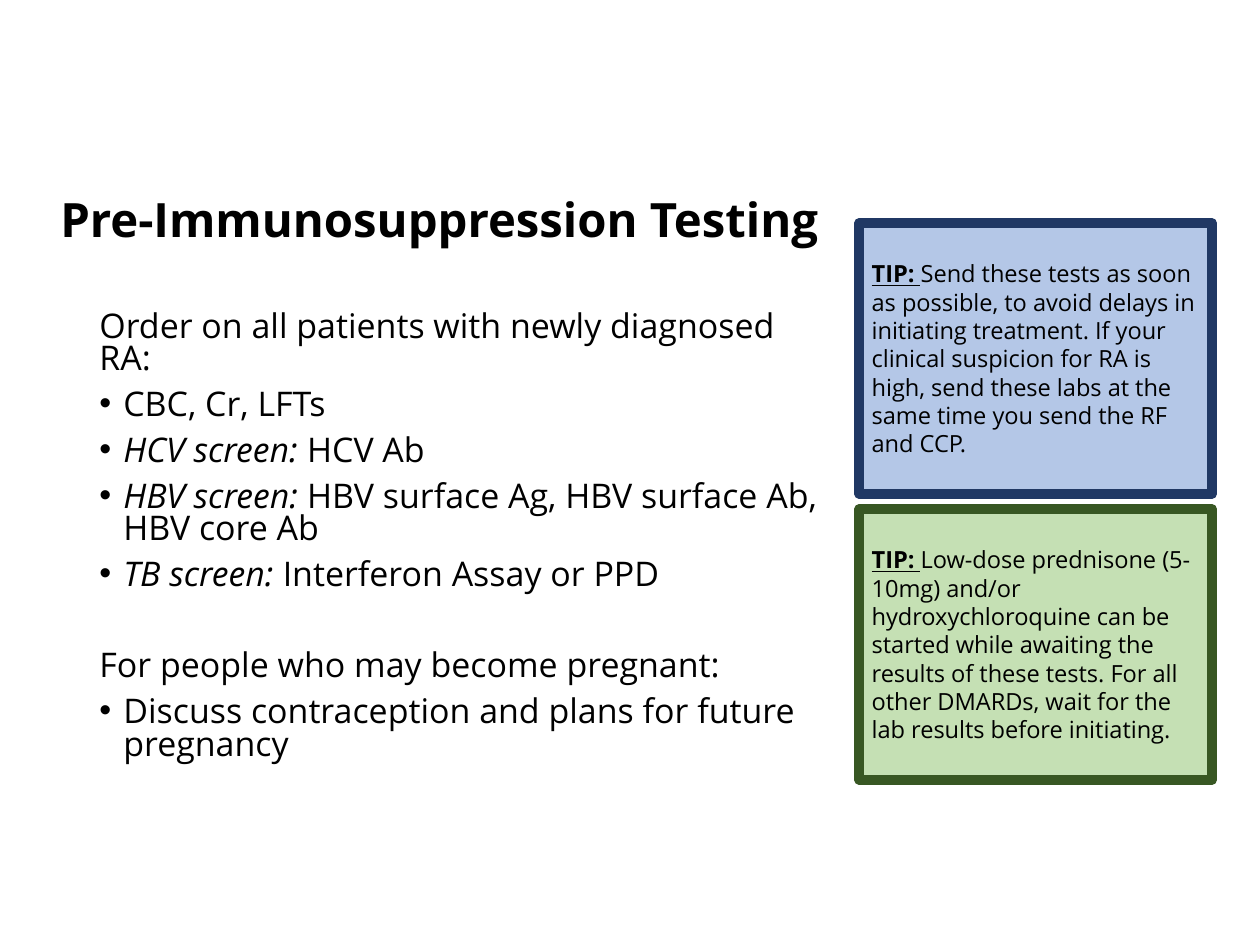
from dataclasses import dataclass

from lxml import etree
from pptx import Presentation
from pptx.dml.color import RGBColor
from pptx.enum.shapes import MSO_SHAPE
from pptx.enum.text import MSO_ANCHOR, PP_ALIGN
from pptx.oxml.ns import qn
from pptx.util import Inches, Pt

RECT = MSO_SHAPE.RECTANGLE
TOP, MIDDLE = MSO_ANCHOR.TOP, MSO_ANCHOR.MIDDLE
LEFT = PP_ALIGN.LEFT


@dataclass(frozen=True)
class Theme:
    font: str = "Open Sans"
    ink: str = "000000"
    blue: tuple = ("B4C7E7", "203864")
    green: tuple = ("C5E0B4", "385723")
    title: float = 27
    body: float = 19.4
    tip: float = 13.5
    gap: float = 7.5
    border: float = 5.5
    indent: float = 0.19


THEME = Theme()

# Each line: bulleted, italic lead, plain text, space before
LINES = [
    (False, "", "Order on all patients with newly diagnosed RA:", 0),
    (True, "", "CBC, Cr, LFTs", THEME.gap),
    (True, "HCV screen: ", "HCV Ab", THEME.gap),
    (True, "HBV screen: ", "HBV surface Ag, HBV surface Ab, HBV core Ab", THEME.gap),
    (True, "TB screen: ", "Interferon Assay or PPD", THEME.gap),
    (False, "", "For people who may become pregnant:", 33.5),
    (True, "", "Discuss contraception and plans for future pregnancy", THEME.gap),
]

TIPS = [
    (THEME.blue, "Send these tests as soon as possible, to avoid delays in "
     "initiating treatment. If your clinical suspicion for RA is high, send "
     "these labs at the same time you send the RF and CCP."),
    (THEME.green, "Low-dose prednisone (5-10mg) and/or hydroxychloroquine can be "
     "started while awaiting the results of these tests. For all other DMARDs, "
     "wait for the lab results before initiating."),
]


def add_run(para, text, size, **style):
    run = para.add_run()
    run.text = text
    values = {"name": THEME.font, "size": Pt(size), **style}
    for name, value in values.items():
        setattr(run.font, name, value)
    run.font.color.rgb = RGBColor.from_string(THEME.ink)


def add_bullet(para):
    props = para._p.get_or_add_pPr()
    props.set("marL", str(Inches(THEME.indent)))
    props.set("indent", str(-Inches(THEME.indent)))
    etree.SubElement(props, qn("a:buFont"), typeface="Arial")
    etree.SubElement(props, qn("a:buChar"), char="•")


def add_frame(slide, box, anchor):
    frame = slide.shapes.add_textbox(*map(Inches, box)).text_frame
    frame.word_wrap = True
    frame.vertical_anchor = anchor
    return frame


def add_title(slide, box):
    para = add_frame(slide, box, MIDDLE).paragraphs[0]
    para.line_spacing = 0.9
    add_run(para, "Pre-Immunosuppression Testing", THEME.title, bold=True)


def add_body(slide, box):
    frame = add_frame(slide, box, TOP)
    for i, (bullet, lead, text, space) in enumerate(LINES):
        para = frame.add_paragraph() if i else frame.paragraphs[0]
        para.line_spacing = 0.8
        para.space_before = Pt(space)
        if bullet:
            add_bullet(para)
        if lead:
            add_run(para, lead, THEME.body, italic=True)
        add_run(para, text, THEME.body)


def add_tip(slide, box, colors, text):
    shape = slide.shapes.add_shape(RECT, *map(Inches, box))
    shape.shadow.inherit = False
    fill, line = map(RGBColor.from_string, colors)
    shape.fill.solid()
    shape.fill.fore_color.rgb = fill
    shape.line.color.rgb = line
    shape.line.width = Pt(THEME.border)
    frame = shape.text_frame
    frame.word_wrap = True
    frame.vertical_anchor = MIDDLE
    para = frame.paragraphs[0]
    para.alignment = LEFT
    add_run(para, "TIP: ", THEME.tip, bold=True, underline=True)
    add_run(para, text, THEME.tip)


def add_tips(slide, box, gap=0.12):
    """Stack the tips in the box, with equal heights and gaps."""
    left, top, width, height = box
    tall = (height - gap * (len(TIPS) - 1)) / len(TIPS)
    for i, (colors, text) in enumerate(TIPS):
        add_tip(slide, (left, top + i * (tall + gap), width, tall), colors, text)


def main():
    deck = Presentation()
    deck.slide_width, deck.slide_height = Inches(10), Inches(7.5)
    slide = deck.slides.add_slide(deck.slide_layouts[6])
    add_title(slide, (0.38, 1.22, 8.62, 1.09))
    add_body(slide, (0.69, 2.43, 5.92, 3.57))
    add_tips(slide, (6.82, 1.77, 2.8, 4.42))
    deck.save("out.pptx")


if __name__ == "__main__":
    main()
